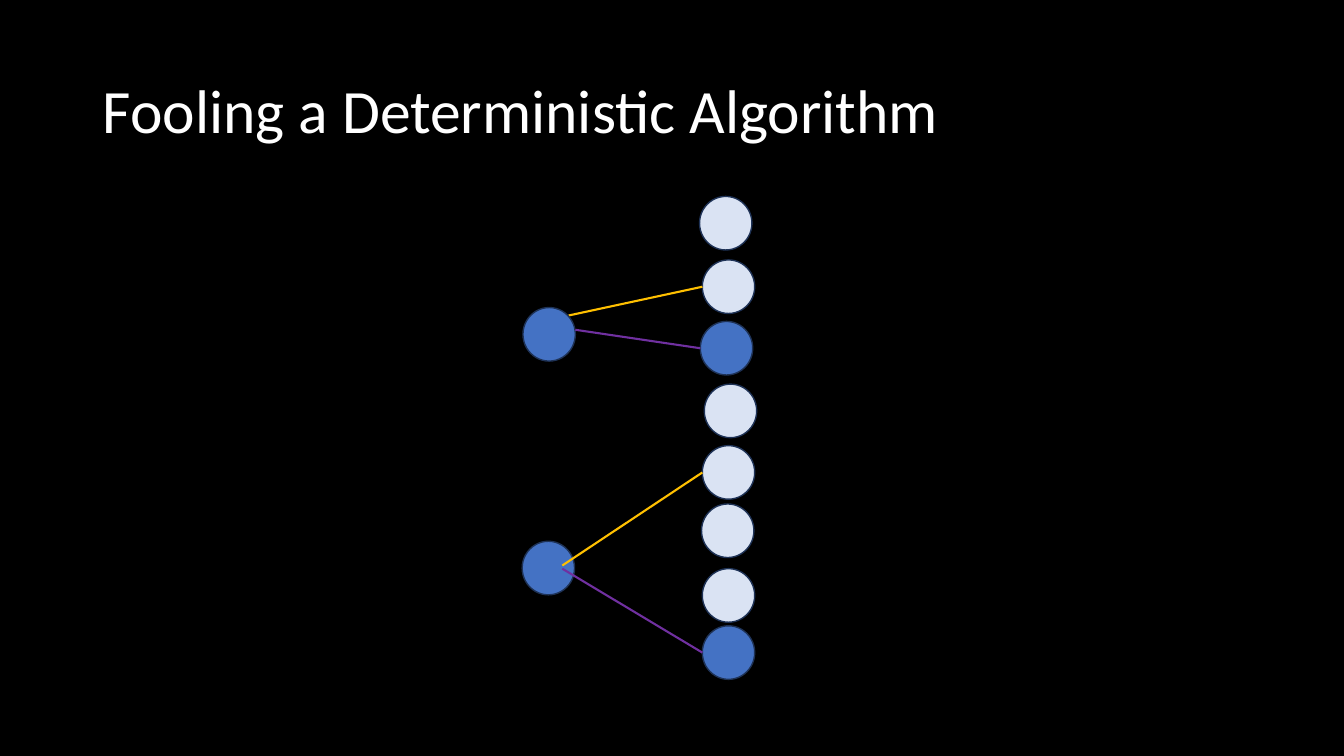
from dataclasses import dataclass

from lxml.etree import SubElement
from pptx import Presentation
from pptx.dml.color import RGBColor
from pptx.enum.shapes import MSO_CONNECTOR, MSO_SHAPE
from pptx.enum.text import MSO_ANCHOR, MSO_AUTO_SIZE, PP_ALIGN
from pptx.oxml.ns import qn
from pptx.util import Cm, Pt


@dataclass(frozen=True)
class Theme:
    background: str = "000000"
    text: str = "FFFFFF"
    matched: str = "4472C4"
    free: str = "DAE3F3"
    outline: str = "1E3256"
    yellow: str = "FFC000"
    purple: str = "7030A0"
    font: str = "Calibri"
    title_size: float = 44
    outline_width: float = 1
    edge_width: float = 1.5


NODE_W, NODE_H = 1.32, 1.35


def add_run(p, text, *, font, size, color):
    r = p.add_run()
    r.text = text
    r.font.name = font
    r.font.size = Pt(size)
    r.font.color.rgb = RGBColor.from_string(color)
    return r


class GraphSlide:
    def __init__(self, prs, theme):
        self.theme = theme
        self.s = prs.slides.add_slide(prs.slide_layouts[5])
        fill = self.s.background.fill
        fill.solid()
        fill.fore_color.rgb = RGBColor.from_string(theme.background)

    def title(self, text, x, y, w, h):
        sp = self.s.shapes.title
        sp.left, sp.top, sp.width, sp.height = Cm(x), Cm(y), Cm(w), Cm(h)
        tf = sp.text_frame
        tf.word_wrap = True
        tf.auto_size = MSO_AUTO_SIZE.NONE
        tf.vertical_anchor = MSO_ANCHOR.MIDDLE
        p = tf.paragraphs[0]
        p.alignment = PP_ALIGN.LEFT
        p.line_spacing = 0.9
        add_run(p, text, font=self.theme.font, size=self.theme.title_size,
                color=self.theme.text)

    def node(self, x, y, color):
        sp = self.s.shapes.add_shape(MSO_SHAPE.OVAL, Cm(x), Cm(y), Cm(NODE_W), Cm(NODE_H))
        sp.shadow.inherit = False
        sp.fill.solid()
        sp.fill.fore_color.rgb = RGBColor.from_string(color)
        sp.line.color.rgb = RGBColor.from_string(self.theme.outline)
        sp.line.width = Pt(self.theme.outline_width)

    def edge(self, start, node, color):
        """Draw a line from a point to the left side of a node."""
        x, y = node
        ln = self.s.shapes.add_connector(MSO_CONNECTOR.STRAIGHT, Cm(start[0]), Cm(start[1]),
                                         Cm(x), Cm(y + NODE_H / 2))
        ln.line.color.rgb = RGBColor.from_string(color)
        ln.line.width = Pt(self.theme.edge_width)
        SubElement(ln._element.spPr, qn("a:effectLst"))


def main():
    prs = Presentation()
    prs.slide_width, prs.slide_height = Cm(33.87), Cm(19.05)
    theme = Theme()
    slide = GraphSlide(prs, theme)

    slide.title("Fooling a Deterministic Algorithm", 2.34, 1.02, 29.21, 3.68)

    # Right column, top to bottom; nodes 2 and 7 are matched
    right = [(17.63, 4.95), (17.7, 6.55), (17.65, 8.1), (17.75, 9.68),
             (17.7, 11.23), (17.68, 12.7), (17.7, 14.33), (17.7, 15.77)]
    for i, (x, y) in enumerate(right):
        slide.node(x, y, theme.matched if i in (2, 7) else theme.free)

    # Upper yellow edge runs behind its left node
    slide.edge((14.33, 7.95), right[1], theme.yellow)

    # Left column
    for x, y in [(13.18, 7.75), (13.16, 13.64)]:
        slide.node(x, y, theme.matched)

    # Edges in front of the left nodes
    slide.edge((14.5, 8.31), right[2], theme.purple)
    slide.edge((14.17, 14.33), right[7], theme.purple)
    slide.edge((14.17, 14.25), right[4], theme.yellow)

    prs.save("out.pptx")


if __name__ == "__main__":
    main()
